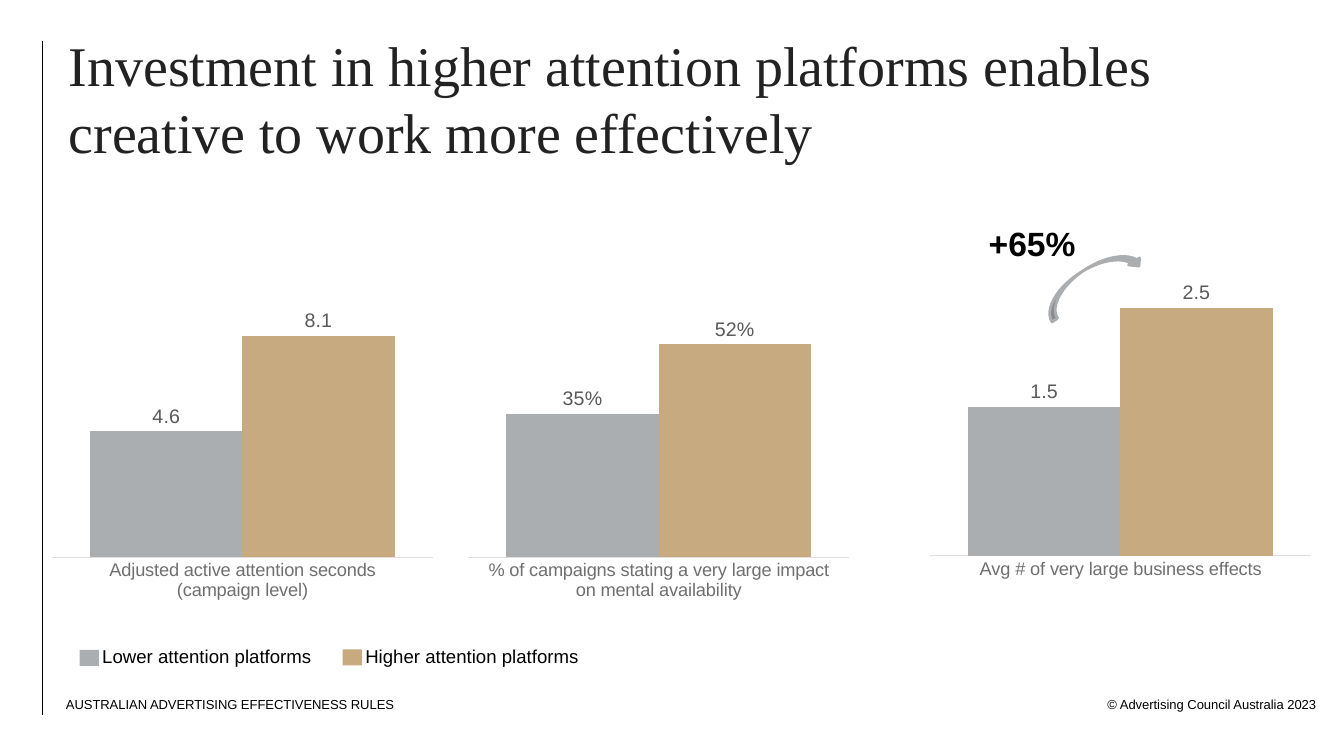
from dataclasses import dataclass

import pptx
import pptx.chart.data
import pptx.dml.color
import pptx.enum.chart
import pptx.enum.shapes
import pptx.enum.text
import pptx.oxml
import pptx.oxml.ns
import pptx.util

Pt = pptx.util.Pt
ALIGN = pptx.enum.text.PP_ALIGN
SHAPE = pptx.enum.shapes.MSO_SHAPE
XL = pptx.enum.chart


@dataclass(frozen=True)
class Theme:
    serif: str = "Times New Roman"
    sans: str = "Arial"
    ink: str = "222222"
    black: str = "000000"
    axis_text: str = "6F6F6F"
    axis_line: str = "DEDEDE"
    label_text: str = "595959"
    lower: str = "ABAEB0"
    higher: str = "C7AA7F"
    title: float = 40
    callout: float = 24
    chart: float = 16
    label: float = 14
    legend: float = 13.3
    axis: float = 13
    footer: float = 9.3


T = Theme()


@dataclass(frozen=True)
class Box:
    x: float
    y: float
    w: float
    h: float

    def lengths(self) -> list:
        return [Pt(v) for v in (self.x, self.y, self.w, self.h)]


@dataclass(frozen=True)
class Label:
    text: str
    box: Box
    size: float
    inset: float = 9.6
    bold: bool = False
    align: ALIGN = ALIGN.LEFT


@dataclass(frozen=True)
class Comparison:
    category: str
    lower: float
    higher: float
    x: float
    y: float
    top: float
    number_format: str = "General"


@dataclass(frozen=True)
class Mark:
    kind: SHAPE
    box: Box
    color: str
    rotation: float = 0
    outline: float = 0


LABELS = [
    Label("AUSTRALIAN ADVERTISING EFFECTIVENESS RULES", Box(37.5, 491.8, 461.5, 28.8), T.footer),
    Label("© Advertising Council Australia 2023", Box(488.2, 491.8, 461.5, 28.8), T.footer,
          align=ALIGN.RIGHT),
    Label("Lower attention platforms", Box(63.4, 452.5, 298.8, 35.3), T.legend),
    Label("Higher attention platforms", Box(251.3, 452.5, 298.8, 35.3), T.legend),
    Label("+65%", Box(699.1, 155.5, 85, 36), T.callout, inset=7.2, bold=True),
]
COMPARISONS = [
    Comparison("Adjusted active attention seconds\n(campaign level)", 4.6, 8.1, 31.7, 158.4, 12),
    Comparison("% of campaigns stating a very large impact on mental availability",
               0.35, 0.52, 329, 158.4, 0.8, "0%"),
    Comparison("Avg # of very large business effects", 1.5, 2.5, 658.8, 143.3, 3.5),
]
MARKS = [
    Mark(SHAPE.RECTANGLE, Box(56.9, 464.2, 13.7, 11.5), T.lower),
    Mark(SHAPE.RECTANGLE, Box(244.8, 463.9, 13.7, 11.5), T.higher),
    Mark(SHAPE.CURVED_DOWN_ARROW, Box(740.2, 191.5, 78.5, 18.7), T.lower, 327.3, 2),
]


def rgb(value: str) -> pptx.dml.color.RGBColor:
    return pptx.dml.color.RGBColor.from_string(value)


def assign(target, **values) -> None:
    for name, value in values.items():
        setattr(target, name, value)


def set_font(font, size: float, color: str, name: str = T.sans, bold: bool = False) -> None:
    assign(font, size=Pt(size), name=name, bold=bold)
    font.color.rgb = rgb(color)


def add_title(s, text: str, box: Box) -> None:
    sp = s.shapes.title
    assign(sp, **dict(zip(("left", "top", "width", "height"), box.lengths())))
    tf = sp.text_frame
    tf.text = text
    assign(tf, margin_left=0, margin_top=0, margin_right=Pt(7.2), margin_bottom=Pt(7.2),
           word_wrap=True, vertical_anchor=pptx.enum.text.MSO_ANCHOR.TOP,
           auto_size=pptx.enum.text.MSO_AUTO_SIZE.NONE)
    p = tf.paragraphs[0]
    assign(p, alignment=ALIGN.LEFT, line_spacing=Pt(48))
    set_font(p.runs[0].font, T.title, T.ink, T.serif)


def add_label(s, label: Label) -> None:
    tf = s.shapes.add_textbox(*label.box.lengths()).text_frame
    side = Pt(label.inset)
    edge = Pt(min(label.inset, 9.6) if label.inset > 7.2 else 3.6)
    assign(tf, word_wrap=True, margin_left=side, margin_right=side,
           margin_top=edge, margin_bottom=edge)
    p = tf.paragraphs[0]
    p.alignment = label.align
    r = p.add_run()
    r.text = label.text
    set_font(r.font, label.size, T.black, bold=label.bold)


def add_comparison(s, item: Comparison) -> None:
    data = pptx.chart.data.CategoryChartData(number_format=item.number_format)
    data.categories = [item.category]
    data.add_series("Lower attention platforms", [item.lower])
    data.add_series("Higher attention platforms", [item.higher])
    chart = s.shapes.add_chart(XL.XL_CHART_TYPE.COLUMN_CLUSTERED,
                               *Box(item.x, item.y, 283, 276.5).lengths(), data).chart
    assign(chart, has_legend=False, has_title=False)
    set_font(chart.font, T.chart, T.ink)
    assign(chart.value_axis, visible=False, has_major_gridlines=False,
           minimum_scale=0, maximum_scale=item.top)
    axis = chart.category_axis
    assign(axis, major_tick_mark=XL.XL_TICK_MARK.NONE, minor_tick_mark=XL.XL_TICK_MARK.NONE)
    set_font(axis.tick_labels.font, T.axis, T.axis_text)
    axis.format.line.color.rgb = rgb(T.axis_line)
    axis.format.line.width = Pt(0.75)
    plot = chart.plots[0]
    assign(plot, gap_width=50, overlap=0, vary_by_categories=False)
    for series, color in zip(plot.series, (T.lower, T.higher)):
        series.format.fill.solid()
        series.format.fill.fore_color.rgb = rgb(color)
        labels = series.data_labels
        assign(labels, show_value=True, position=XL.XL_LABEL_POSITION.OUTSIDE_END,
               number_format=item.number_format, number_format_is_linked=False)
        set_font(labels.font, T.label, T.label_text)


def add_mark(s, mark: Mark) -> None:
    sp = s.shapes.add_shape(mark.kind, *mark.box.lengths())
    sp.shadow.inherit = False
    sp.rotation = mark.rotation
    sp.fill.solid()
    sp.fill.fore_color.rgb = rgb(mark.color)
    if mark.outline:
        sp.line.color.rgb = rgb(mark.color)
        sp.line.width = Pt(mark.outline)
    else:
        sp.line.fill.background()


def add_margin_rule(s, x: float, top: float, bottom: float) -> None:
    line = s.shapes.add_connector(pptx.enum.shapes.MSO_CONNECTOR.STRAIGHT,
                                  Pt(x), Pt(top), Pt(x), Pt(bottom))
    line.line.color.rgb = rgb(T.black)
    line.line.width = Pt(0.75)
    properties = line.element.find(pptx.oxml.ns.qn("p:spPr"))
    properties.append(pptx.oxml.parse_xml(f"<a:effectLst {pptx.oxml.ns.nsdecls('a')}/>"))


def main() -> None:
    prs = pptx.Presentation()
    assign(prs, slide_width=Pt(960), slide_height=Pt(540))
    s = prs.slides.add_slide(prs.slide_layouts.get_by_name("Title Only"))
    add_margin_rule(s, 30.2, 29.5, 510.5)
    add_title(s, "Investment in higher attention platforms enables "
                 "creative to work more effectively", Box(49, 21.6, 785.5, 92.2))
    for item in COMPARISONS:
        add_comparison(s, item)
    for mark in MARKS:
        add_mark(s, mark)
    for label in LABELS:
        add_label(s, label)
    prs.save("out.pptx")


if __name__ == "__main__":
    main()
